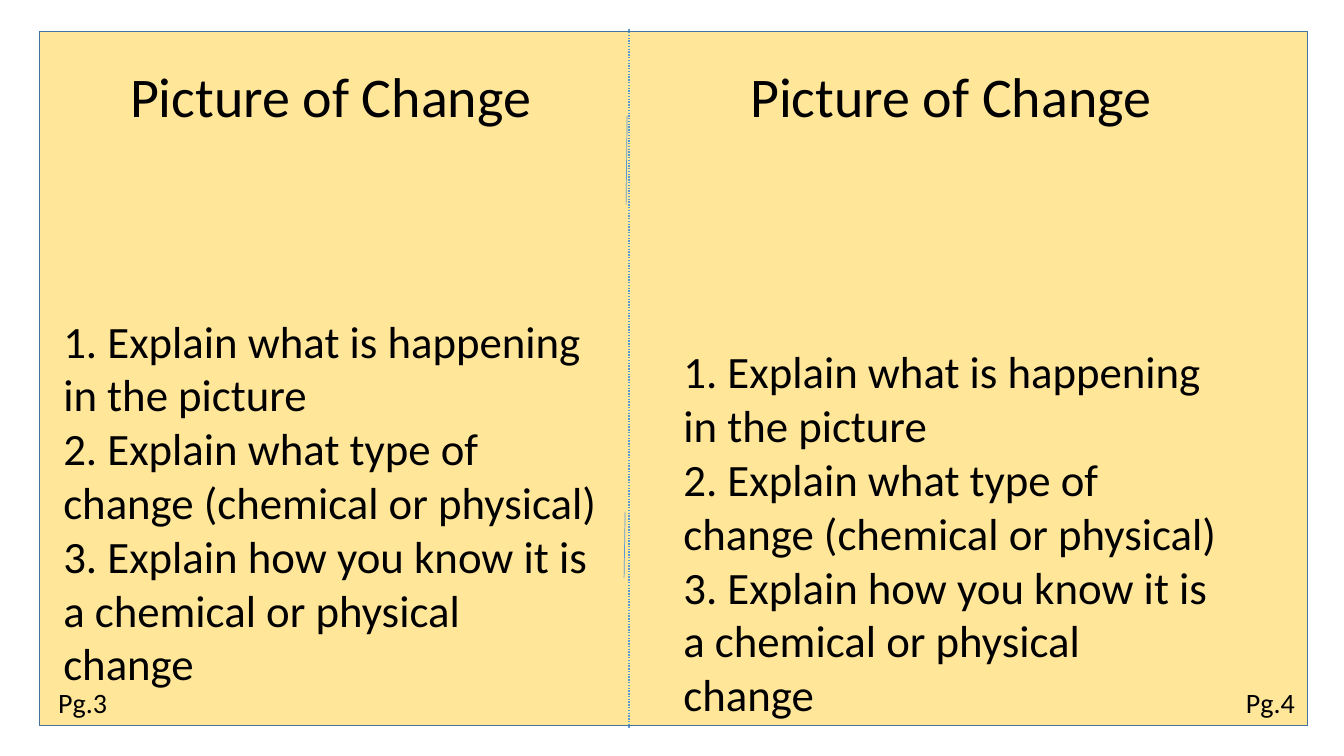
from pptx import Presentation
from pptx.dml.color import RGBColor
from pptx.enum.dml import MSO_LINE
from pptx.enum.shapes import MSO_CONNECTOR, MSO_SHAPE
from pptx.enum.text import PP_ALIGN
from pptx.util import Pt
from lxml import etree

RECT, STRAIGHT = MSO_SHAPE.RECTANGLE, MSO_CONNECTOR.STRAIGHT
DOT, CENTER, LEFT = MSO_LINE.ROUND_DOT, PP_ALIGN.CENTER, PP_ALIGN.LEFT
PX = 9144  # 100 px to the inch
FONT, INK = "Calibri", "000000"
CREAM, EDGE, BLUE = "FFE699", "43739E", "5B9BD5"

# Content
HEAD = "Picture of Change"
TASKS = [
    "1. Explain what is happening in the picture",
    "2. Explain what type of change (chemical or physical)",
    "3. Explain how you know it is a chemical or physical change",
]
# label, text left, text height, gap under heading (pt), label left
PAGES = [
    ("Pg.3", 53, 636, 132, 4),
    ("Pg.4", 668, 666, 154, 1182),
]
# x1, y1, x2, y2, width (pt), dash
FOLDS = [
    (622, 115, 621, 203, 0.5, None),
    (620, 508, 619, 573, 0.5, None),
    (624, 29, 624, 722, 1, DOT),
]

deck = Presentation()
deck.slide_width, deck.slide_height = 1333 * PX, 750 * PX
slide = deck.slides.add_slide(deck.slide_layouts[6])
shapes = slide.shapes


def color(code):
    return RGBColor.from_string(code)


def emu(*nums):
    return [n * PX for n in nums]


def add_text(box, lines):
    """Fill a text box from (text, size, align) lines."""
    frame = shapes.add_textbox(*emu(*box)).text_frame
    frame.word_wrap = True
    frame.text = "\n".join(line[0] for line in lines)
    for para, (_, size, align) in zip(frame.paragraphs, lines):
        para.alignment = align
        font = para.runs[0].font
        font.name, font.size = FONT, Pt(size)
        font.color.rgb = color(INK)
    return frame


# Sheet
sheet = shapes.add_shape(RECT, *emu(39, 31, 1258, 689))
sheet.shadow.inherit = False
sheet.fill.solid()
sheet.fill.fore_color.rgb = color(CREAM)
sheet.line.color.rgb = color(EDGE)
sheet.line.width = Pt(1)

# Fold lines
for *ends, width, dash in FOLDS:
    fold = shapes.add_connector(STRAIGHT, *emu(*ends))
    fold.line.color.rgb = color(BLUE)
    fold.line.width = Pt(width)
    if dash:
        fold.line.dash_style = dash
    props = fold.line._get_or_add_ln().getparent()
    etree.SubElement(props, "{http://schemas.openxmlformats.org/drawingml/2006/main}effectLst")

# Page texts
for _, left, height, gap, _ in PAGES:
    lines = [(HEAD, 40, CENTER)] + [(task, 32, LEFT) for task in TASKS]
    frame = add_text((left, 56, 550, height), lines)
    frame.paragraphs[0].space_after = Pt(gap)

# Page numbers
for label, *_, left in PAGES:
    add_text((left, 675, 156, 44), [(label, 20, CENTER)])

deck.save("out.pptx")
